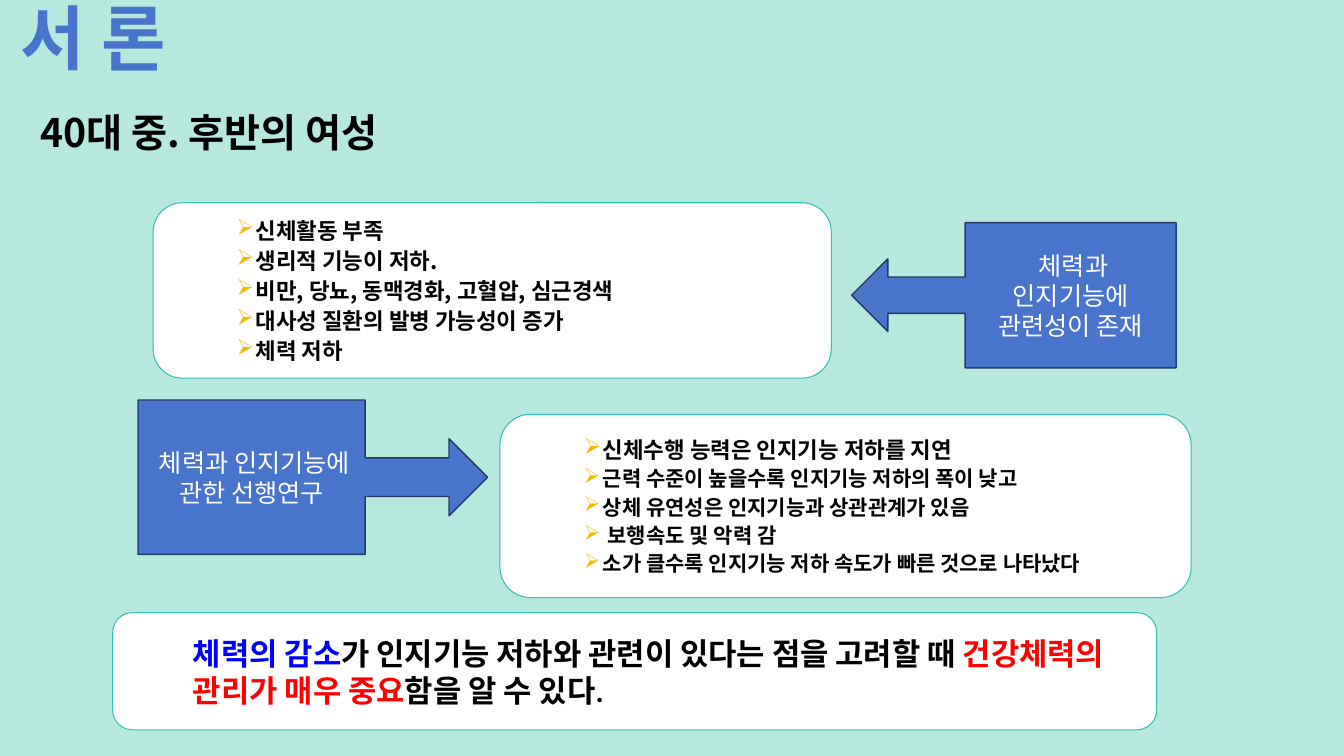
from lxml import etree
from pptx import Presentation
from pptx.dml.color import RGBColor
from pptx.enum.shapes import MSO_SHAPE
from pptx.enum.text import MSO_ANCHOR, PP_ALIGN
from pptx.oxml.ns import qn
from pptx.util import Cm, Pt

ROUND = MSO_SHAPE.ROUNDED_RECTANGLE
LEFT = MSO_SHAPE.LEFT_ARROW_CALLOUT
RIGHT = MSO_SHAPE.RIGHT_ARROW_CALLOUT
MIDDLE = MSO_ANCHOR.MIDDLE
CENTER = PP_ALIGN.CENTER

MINT = RGBColor(0xB7, 0xE8, 0xDD)
TEAL = RGBColor(0x30, 0xC0, 0xB4)
BLUE = RGBColor(0x48, 0x74, 0xCB)
NAVY = RGBColor(0x24, 0x3A, 0x65)
GOLD = RGBColor(0xF2, 0xBA, 0x02)
WHITE = RGBColor(0xFF, 0xFF, 0xFF)
BLACK = RGBColor(0, 0, 0)
VIVID = RGBColor(0, 0, 0xFF)
RED = RGBColor(0xFF, 0, 0)

KOREAN = "Noto Sans CJK KR"
LATIN = "Calibri"


class Deck:
    def __init__(self):
        self.file = Presentation()
        self.file.slide_width = Cm(33.87)
        self.file.slide_height = Cm(19.05)
        self.slide = self.file.slides.add_slide(self.file.slide_layouts[6])
        fill = self.slide.background.fill
        fill.solid()
        fill.fore_color.rgb = MINT

    def run(self, para, text, size, color, bold=True, face=KOREAN):
        run = para.add_run()
        run.text = text
        font = run.font
        font.size = Pt(size)
        font.bold = bold
        font.color.rgb = color
        font.name = face
        east = etree.SubElement(font._element, qn("a:ea"))
        east.set("typeface", KOREAN)

    def indent(self, para, left, first=0):
        props = para._p.get_or_add_pPr()
        props.set("marL", str(Cm(left)))
        props.set("indent", str(Cm(first)))
        return props

    def bullet(self, para):
        props = self.indent(para, 1.68, -0.48)
        tint = etree.SubElement(props, qn("a:buClr"))
        etree.SubElement(tint, qn("a:srgbClr")).set("val", str(GOLD))
        etree.SubElement(props, qn("a:buChar")).set("char", "➢")
        para.space_after = Pt(2.2)

    def inset(self, frame, wide, high):
        frame.word_wrap = True
        frame.margin_left = frame.margin_right = Cm(wide)
        frame.margin_top = frame.margin_bottom = Cm(high)

    def label(self, box, text, size, color, left, pitch=1.0):
        frame = self.slide.shapes.add_textbox(*map(Cm, box)).text_frame
        self.inset(frame, 0, 0)
        para = frame.paragraphs[0]
        self.indent(para, left)
        para.line_spacing = pitch
        self.run(para, text, size, color)

    def shape(self, kind, box, fill, line, width):
        shape = self.slide.shapes.add_shape(kind, *map(Cm, box))
        shape.shadow.inherit = False
        shape.fill.solid()
        shape.fill.fore_color.rgb = fill
        shape.line.color.rgb = line
        shape.line.width = Pt(width)
        frame = shape.text_frame
        frame.word_wrap = True
        frame.vertical_anchor = MIDDLE
        return frame

    def panel(self, box):
        frame = self.shape(ROUND, box, WHITE, TEAL, 0)
        self.inset(frame, 0.69, 0.36)
        frame.paragraphs[0].alignment = PP_ALIGN.LEFT
        return frame

    def points(self, box, items):
        frame = self.panel(box)
        for i, (text, size) in enumerate(items):
            para = frame.add_paragraph() if i else frame.paragraphs[0]
            para.alignment = PP_ALIGN.LEFT
            self.bullet(para)
            self.run(para, text, size, BLACK)

    def claim(self, box, parts):
        para = self.panel(box).paragraphs[0]
        self.indent(para, 1.19)
        for text, color in parts:
            self.run(para, text, 22, color, face=LATIN)

    def callout(self, kind, box, text):
        para = self.shape(kind, box, BLUE, NAVY, 1).paragraphs[0]
        para.alignment = CENTER
        self.run(para, text, 18, WHITE, bold=False)


def main():
    deck = Deck()
    deck.label((0, 0.28, 30, 1.8), "서 론", 50, BLUE, 0.53, 0.8)
    deck.label((0.91, 2.72, 30.66, 2.72), "40대 중. 후반의 여성", 28, BLACK, 0.1)
    deck.points((3.86, 5.11, 17.09, 4.42), [
        ("신체활동 부족", 16),
        ("생리적 기능이 저하.", 16),
        ("비만, 당뇨, 동맥경화, 고혈압, 심근경색", 16),
        ("대사성 질환의 발병 가능성이 증가", 16),
        ("체력 저하", 16),
    ])
    deck.points((12.6, 10.44, 17.42, 4.62), [
        ("신체수행 능력은 인지기능 저하를 지연", 16),
        ("근력 수준이 높을수록 인지기능 저하의 폭이 낮고", 15),
        ("상체 유연성은 인지기능과 상관관계가 있음", 15),
        (" 보행속도 및 악력 감", 15),
        ("소가 클수록 인지기능 저하 속도가 빠른 것으로 나타났다", 15),
    ])
    deck.claim((2.84, 15.44, 26.31, 2.95), [
        ("체력의 감소", VIVID),
        ("가 인지기능 저하와 관련이 있다는 점을 고려할 때 ", BLACK),
        ("건강체력의 관리가 매우 중요", RED),
        ("함을 알 수 있다.", BLACK),
    ])
    deck.callout(LEFT, (21.46, 5.61, 8.18, 3.66), " 체력과 인지기능에 관련성이 존재")
    deck.callout(RIGHT, (3.48, 10.08, 8.81, 3.89), " 체력과 인지기능에 관한 선행연구")
    deck.file.save("out.pptx")


if __name__ == "__main__":
    main()
